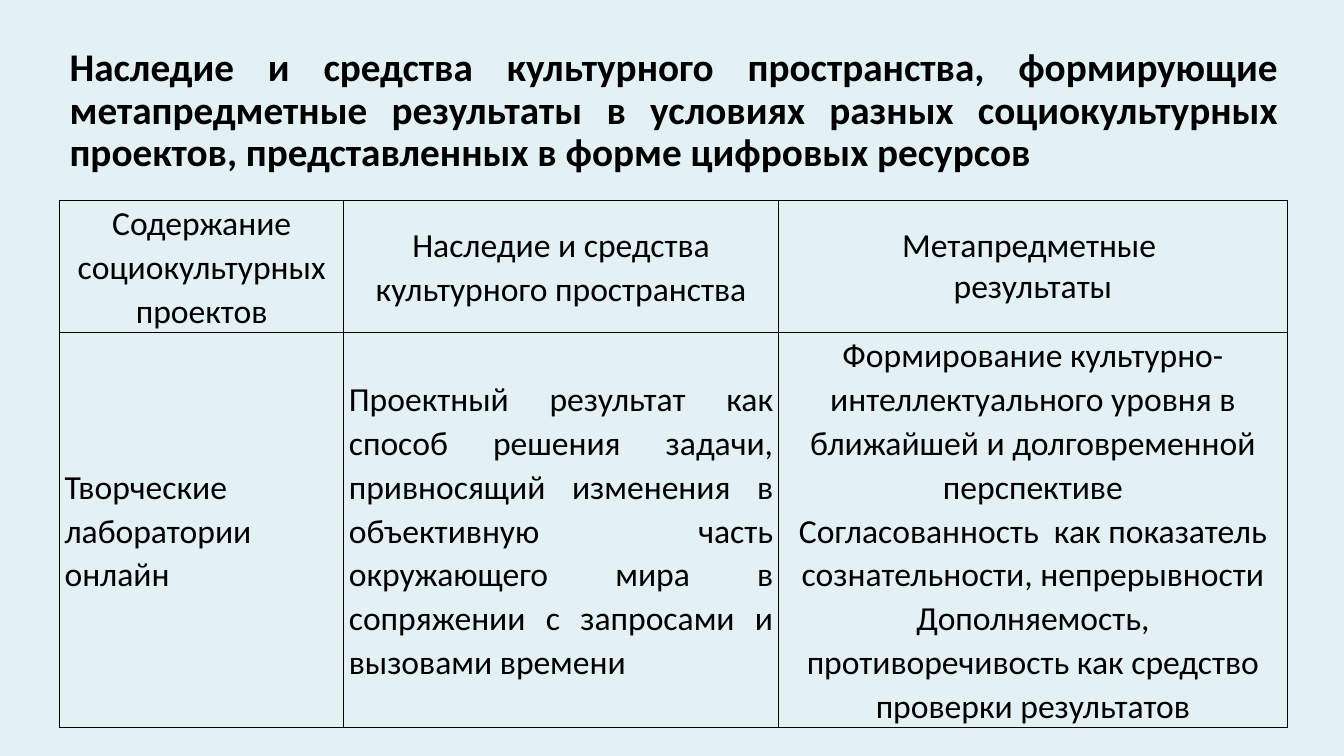
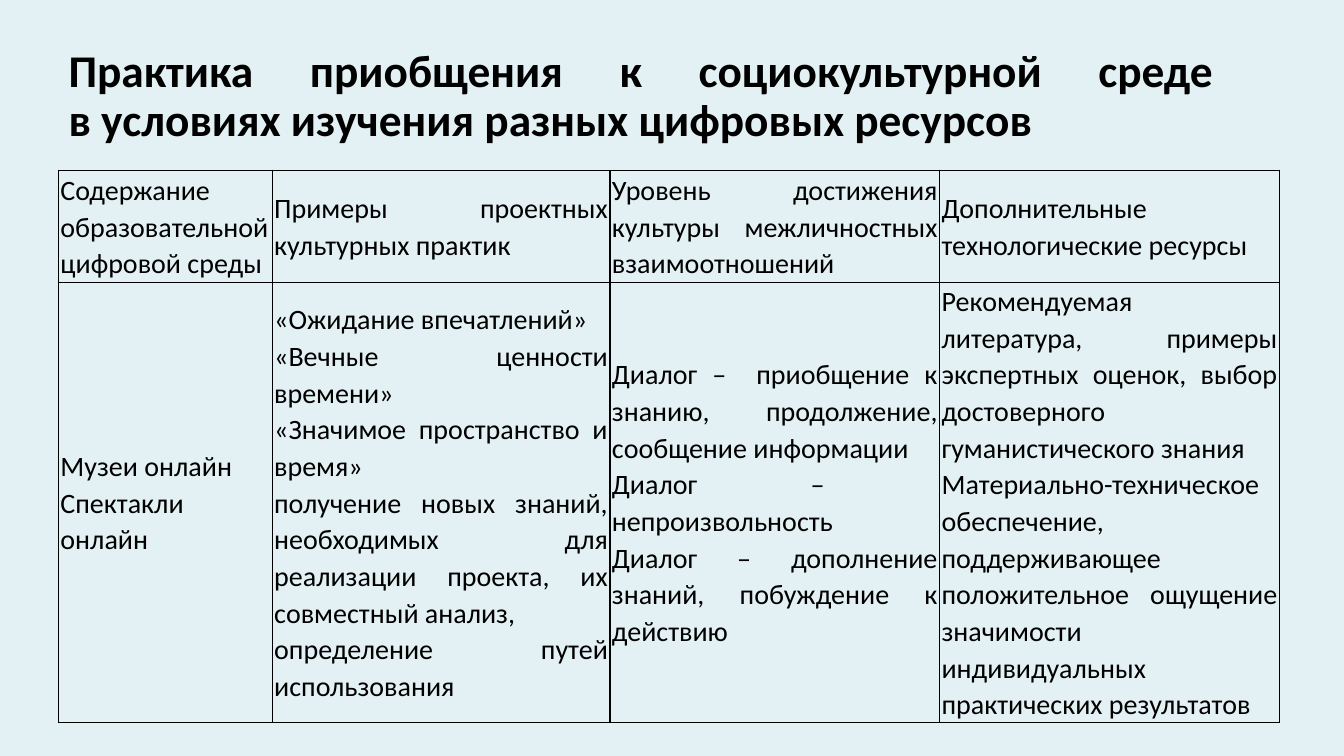
from pptx import Presentation
from pptx.dml.color import RGBColor
from pptx.enum.text import MSO_ANCHOR, MSO_AUTO_SIZE, PP_ALIGN
from pptx.oxml import parse_xml
from pptx.oxml.ns import nsdecls
from pptx.util import Inches, Pt

COLORS = {"background": "E4F1F4", "text": "000000", "border": "000000"}
FONT = "Calibri"
CENTER, JUSTIFY = PP_ALIGN.CENTER, PP_ALIGN.JUSTIFY


def write(tf, text, size, bold=False, align=JUSTIFY, spacing=1.07):
    """Write one paragraph per list item; a newline is a line break."""
    paragraphs = [text] if isinstance(text, str) else text
    for i, paragraph in enumerate(paragraphs):
        p = tf.add_paragraph() if i else tf.paragraphs[0]
        p.alignment, p.line_spacing = align, spacing
        for j, line in enumerate(paragraph.split("\n")):
            if j:
                p.add_line_break()
            r = p.add_run()
            r.text = line
            r.font.name, r.font.size, r.font.bold = FONT, Pt(size), bold
            r.font.color.rgb = RGBColor.from_string(COLORS["text"])


def add_titled_slide(prs, title, box, size):
    s = prs.slides.add_slide(prs.slide_layouts[5])
    sp = s.shapes.title
    sp.left, sp.top, sp.width, sp.height = map(Inches, box)
    tf = sp.text_frame
    tf.auto_size, tf.word_wrap = MSO_AUTO_SIZE.NONE, True
    tf.vertical_anchor = MSO_ANCHOR.MIDDLE
    write(tf, title, size, bold=True, spacing=0.9)
    return s


def set_borders(cell, width=1):
    tc_pr = cell._tc.get_or_add_tcPr()
    for side in "LRTB":
        tc_pr.append(parse_xml(
            f'<a:ln{side} {nsdecls("a")} w="{Pt(width)}"><a:solidFill>'
            f'<a:srgbClr val="{COLORS["border"]}"/></a:solidFill></a:ln{side}>'))


def add_grid(s, left, top, widths, heights, rows, size, margin):
    """Each cell is its text, or (text, format) where the format differs."""
    table = s.shapes.add_table(
        len(heights), len(widths), Inches(left), Inches(top),
        Inches(sum(widths)), Inches(sum(heights))).table
    table.first_row = table.horz_banding = False
    for column, width in zip(table.columns, widths):
        column.width = Inches(width)
    for row, height, texts in zip(table.rows, heights, rows):
        row.height = Inches(height)
        for cell, content in zip(row.cells, texts):
            text, style = content if isinstance(content, tuple) else (content, {})
            set_borders(cell)
            cell.fill.background()
            cell.margin_left = cell.margin_right = Inches(margin)
            cell.margin_top = cell.margin_bottom = 0
            cell.vertical_anchor = MSO_ANCHOR.MIDDLE
            write(cell.text_frame, text, size, **style)


def add_heritage_slide(prs):
    s = add_titled_slide(
        prs,
        "Наследие и средства культурного пространства, формирующие "
        "метапредметные результаты в условиях разных социокультурных "
        "проектов, представленных в форме цифровых ресурсов",
        (0.59, 0.38, 12.18, 1.45), 28)
    centered = {"align": CENTER}
    rows = [
        [("Содержание социокультурных проектов", centered),
         ("Наследие и средства культурного пространства", centered),
         (["Метапредметные ", "результаты"], {"align": CENTER, "spacing": 1.0})],
        ["Творческие лаборатории онлайн",
         "Проектный результат как способ решения задачи, привносящий "
         "изменения в объективную часть окружающего мира в сопряжении "
         "с запросами и вызовами времени",
         (["Формирование культурно-интеллектуального уровня в ближайшей "
           "и долговременной перспективе",
           "Согласованность  как показатель сознательности, непрерывности",
           "Дополняемость, противоречивость как средство проверки "
           "результатов"], centered)],
    ]
    add_grid(s, 0.59, 1.99, [2.82, 4.31, 5.05], [1.31, 3.92], rows,
             size=24, margin=0.05)


def add_practice_slide(prs):
    s = add_titled_slide(
        prs,
        "Практика приобщения к социокультурной среде \n"
        "в условиях изучения разных цифровых ресурсов",
        (0.58, 0.48, 12.12, 0.97), 32.4)
    rows = [
        ["Содержание образовательной цифровой среды",
         "Примеры проектных культурных практик",
         "Уровень достижения культуры межличностных взаимоотношений",
         "Дополнительные технологические ресурсы"],
        [["Музеи онлайн", "Спектакли онлайн"],
         ["«Ожидание впечатлений»",
          "«Вечные ценности времени»",
          "«Значимое пространство и время»",
          "получение новых знаний, необходимых для реализации проекта, "
          "их совместный анализ,",
          "определение путей использования"],
         ["Диалог –  приобщение к знанию, продолжение, сообщение информации",
          "Диалог –  непроизвольность",
          "Диалог – дополнение знаний, побуждение к действию"],
         ["Рекомендуемая литература, примеры экспертных оценок, выбор "
          "достоверного гуманистического знания",
          "Материально-техническое обеспечение, поддерживающее "
          "положительное ощущение значимости индивидуальных "
          "практических результатов"]],
    ]
    add_grid(s, 0.58, 1.69, [2.12, 3.35, 3.27, 3.37], [1.11, 4.37], rows,
             size=20, margin=0.02)


def main():
    prs = Presentation()
    prs.slide_width, prs.slide_height = Inches(13.33), Inches(7.5)
    # Shared background
    fill = prs.slide_master.background.fill
    fill.solid()
    fill.fore_color.rgb = RGBColor.from_string(COLORS["background"])
    # Slides
    add_heritage_slide(prs)
    add_practice_slide(prs)
    prs.save("out.pptx")


if __name__ == "__main__":
    main()
